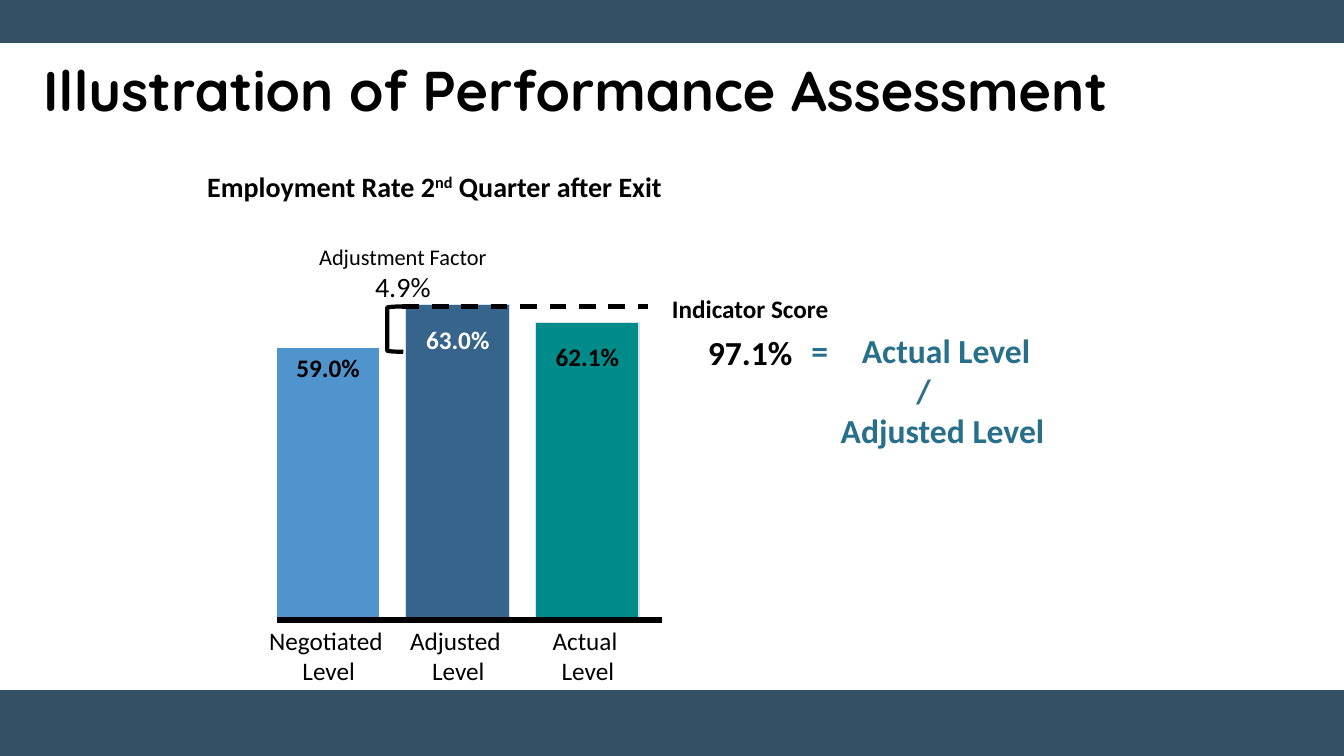
"""Build the performance assessment slide with its bar illustration."""
from lxml import etree
from pptx import Presentation
from pptx.dml.color import RGBColor
from pptx.enum.dml import MSO_LINE
from pptx.enum.shapes import MSO_CONNECTOR, MSO_SHAPE
from pptx.enum.text import MSO_ANCHOR, PP_ALIGN
from pptx.oxml.ns import qn
from pptx.util import Inches, Pt

RECT, BRACKET = MSO_SHAPE.RECTANGLE, MSO_SHAPE.LEFT_BRACKET
STRAIGHT, DASH = MSO_CONNECTOR.STRAIGHT, MSO_LINE.DASH
LEFT, CENTER, MIDDLE = PP_ALIGN.LEFT, PP_ALIGN.CENTER, MSO_ANCHOR.MIDDLE
color = RGBColor.from_string
BLACK, WHITE, NAVY, TEAL, PALE = "000000", "FFFFFF", "345065", "276F8B", "D5E4EB"

deck = Presentation()
deck.slide_width, deck.slide_height = Inches(13.33), Inches(7.5)
slide = deck.slides.add_slide(deck.slide_layouts[6])
shapes = slide.shapes


def block(x, y, w, h, fill, edge):
    shape = shapes.add_shape(RECT, *map(Inches, (x, y, w, h)))
    shape.shadow.inherit = False
    shape.fill.solid()
    shape.fill.fore_color.rgb = color(fill)
    shape.line.color.rgb = color(edge)
    shape.line.width = Pt(1)


def label(x, y, w, h, lines, size, bold=False, ink=BLACK, face="Calibri", align=CENTER):
    frame = shapes.add_textbox(*map(Inches, (x, y, w, h))).text_frame
    frame.word_wrap = True
    for i, line in enumerate(lines):
        para = frame.add_paragraph() if i else frame.paragraphs[0]
        para.text = line
        para.alignment = align
        para.font.size, para.font.bold, para.font.name = Pt(size), bold, face
        para.font.color.rgb = color(ink)
    return frame


for y, h in ((6.85, 0.65), (0, 0.42)):
    block(0, y, 13.33, h, NAVY, NAVY)

title = label(0.33, 0.45, 12.47, 0.96, ["Illustration of Performance Assessment"],
              40, True, face="Quicksand", align=LEFT)
title.vertical_anchor = MIDDLE
title.paragraphs[0].line_spacing = 0.9

BASE, WIDE, STEP = 6.15, 1.03, 1.285
bars = [
    ("Negotiated ", "59.0%", 3.45, 3.45, "4F94CD", WHITE, BLACK),
    ("Adjusted ", "63.0%", 3.02, 3.17, "36648B", PALE, WHITE),
    ("Actual ", "62.1%", 3.2, 3.34, "008B8B", PALE, BLACK),
]
for i, (name, rate, top, mark, fill, edge, ink) in enumerate(bars):
    x = 2.74 + i * STEP
    block(x, top, WIDE, BASE - top, fill, edge)
    label(x - 0.22, BASE, 1.48, 0.71, [name, "Level"], 18)
    label(x, mark, WIDE, 0.4, [rate], 18, True, ink)

head = label(1.83, 1.63, 4.96, 0.44, ["Employment Rate 2"], 20, True).paragraphs[0]
power = head.add_run()
power.text = "nd"
power.font._element.set("baseline", "30000")
head.add_run().text = " Quarter after Exit"

factor = label(2.94, 2.36, 2.11, 0.71, ["Adjustment Factor "], 16).paragraphs[0]
gap = factor.add_run()
gap.text = "4.9%"
gap.font.size = Pt(20)

brace = shapes.add_shape(BRACKET, *map(Inches, (3.84, 3.04, 0.16, 0.45)))
brace.shadow.inherit = False
brace.fill.background()
brace.line.color.rgb = color(BLACK)
brace.line.width = Pt(3)

for start, end, y, width, dash in ((2.75, 6.57, BASE, 4.5, None), (3.99, 6.43, 3.04, 3, DASH)):
    rule = shapes.add_connector(STRAIGHT, *map(Inches, (start, y, end, y)))
    rule.line.color.rgb = color(BLACK)
    rule.line.width = Pt(width)
    rule.line.dash_style = dash
    etree.SubElement(rule._element.spPr, qn("a:effectLst"))

score = label(6.55, 2.86, 1.78, 0.89, ["Indicator Score", "97.1%"], 18, True).paragraphs[1]
score.font.size = Pt(24)
score.space_before = Pt(6)

ratio = label(7.48, 3.22, 3.29, 1.31, ["=\tActual Level", "/", "Adjusted Level"],
              24, True, TEAL, align=LEFT)
for para, indent in zip(ratio.paragraphs, (0.47, 1.51, 0.76)):
    props = para._p.get_or_add_pPr()
    props.set("marL", str(Inches(indent)))
    props.set("indent", "0")
tabs = etree.Element(qn("a:tabLst"))
etree.SubElement(tabs, qn("a:tab"), pos=str(Inches(0.87)), algn="l")
ratio.paragraphs[0]._p.pPr.insert(0, tabs)

deck.save("out.pptx")
